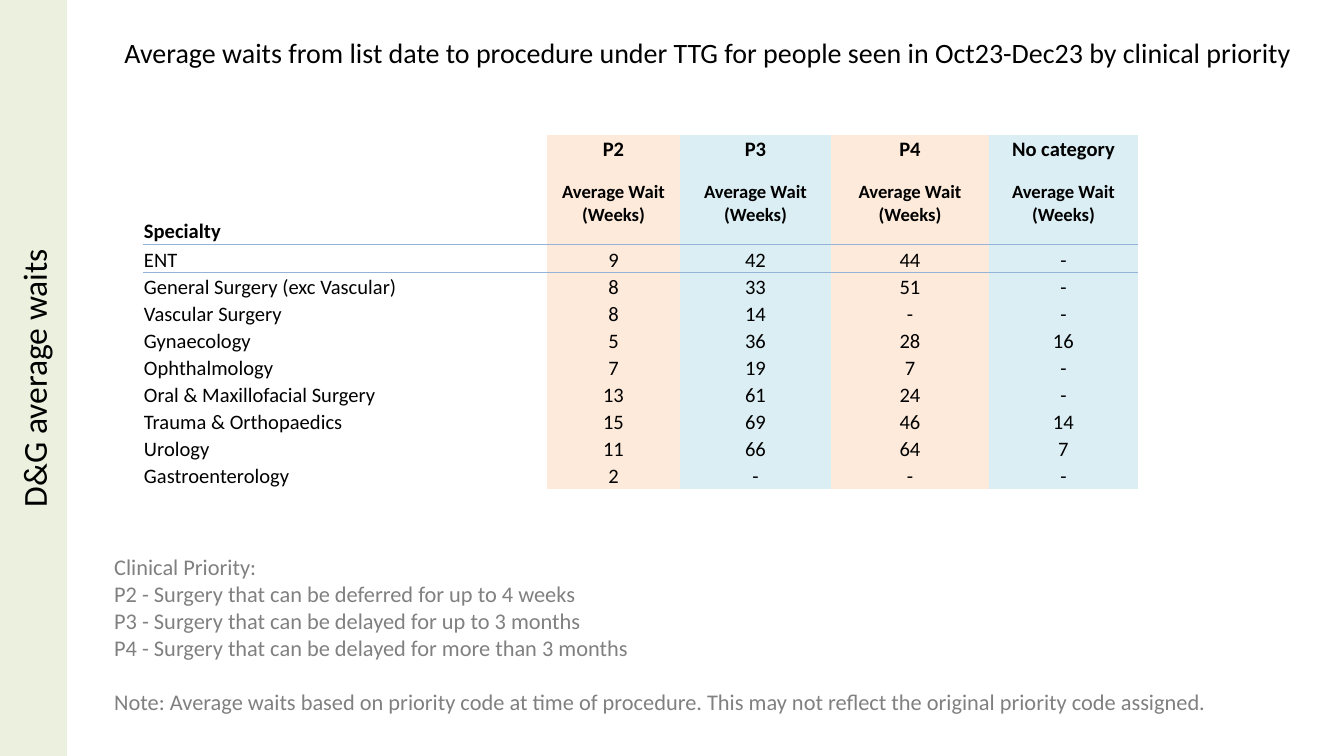
from lxml.etree import SubElement
from pptx import Presentation
from pptx.dml.color import RGBColor
from pptx.enum.shapes import MSO_SHAPE
from pptx.enum.text import MSO_ANCHOR, MSO_AUTO_SIZE, PP_ALIGN
from pptx.oxml.ns import qn
from pptx.util import Pt

SIDEBAR_TEXT = "D&G average waits"
TITLE = ("Average waits from list date to procedure under TTG for people seen "
         "in Oct23-Dec23 by clinical priority")
WAIT = "Average Wait (Weeks)"
ROWS = [
    ("", "P2", "P3", "P4", "No category"),
    ("Specialty", WAIT, WAIT, WAIT, WAIT),
    ("ENT", "9", "42", "44", "-"),
    ("General Surgery (exc Vascular)", "8", "33", "51", "-"),
    ("Vascular Surgery", "8", "14", "-", "-"),
    ("Gynaecology", "5", "36", "28", "16"),
    ("Ophthalmology", "7", "19", "7", "-"),
    ("Oral & Maxillofacial Surgery", "13", "61", "24", "-"),
    ("Trauma & Orthopaedics", "15", "69", "46", "14"),
    ("Urology", "11", "66", "64", "7"),
    ("Gastroenterology", "2", "-", "-", "-"),
]
NOTES = [
    "Clinical Priority:",
    "P2 - Surgery that can be deferred for up to 4 weeks",
    "P3 - Surgery that can be delayed for up to 3 months",
    "P4 - Surgery that can be delayed for more than 3 months",
    "Note: Average waits based on priority code at time of procedure. "
    "This may not reflect the original priority code assigned.",
]

BLACK = RGBColor(0x00, 0x00, 0x00)
WHITE = RGBColor(0xFF, 0xFF, 0xFF)
GREY = RGBColor(0x80, 0x80, 0x80)
GREEN = RGBColor(0xEB, 0xF1, 0xDE)
PEACH = RGBColor(0xFD, 0xEA, 0xDA)
AQUA = RGBColor(0xDB, 0xEE, 0xF4)
RULE = RGBColor(0x95, 0xB3, 0xD7)

FONT = "Calibri"
PLAIN_TABLE = "{2D5ABB26-0587-4C30-8999-92F81FD0307C}"
COLUMN_WIDTHS = [404, 133, 151, 158, 149]
COLUMN_FILLS = [WHITE, PEACH, AQUA, PEACH, AQUA]
ROW_HEIGHTS = [27, 82, 29] + [27] * 8
HEADER_ROWS = 2
SCALE = 914400 / 134.4


def px(length):
    return round(length * SCALE)


def box(left, top, width, height):
    return [px(length) for length in (left, top, width, height)]


def apply(target, values):
    for name, value in values.items():
        setattr(target, name, value)


def write(paragraph, text, size, color=BLACK, bold=False, align=PP_ALIGN.LEFT):
    paragraph.alignment = align
    if not text:
        SubElement(paragraph._p, qn("a:endParaRPr"), sz=str(size * 100))
        return
    run = paragraph.add_run()
    run.text = text
    apply(run.font, {"name": FONT, "size": Pt(size), "bold": bold})
    run.font.color.rgb = color


def add_border(cell, side):
    line = SubElement(cell._tc.get_or_add_tcPr(), qn(f"a:{side}"), w=str(Pt(0.5)))
    fill = SubElement(line, qn("a:solidFill"))
    SubElement(fill, qn("a:srgbClr"), val=str(RULE))


def add_sidebar(slide):
    sidebar = slide.shapes.add_shape(MSO_SHAPE.RECTANGLE, *box(0, 0, 67, 756))
    sidebar.shadow.inherit = False
    sidebar.fill.solid()
    sidebar.fill.fore_color.rgb = GREEN
    sidebar.line.fill.background()
    frame = sidebar.text_frame
    frame.vertical_anchor = MSO_ANCHOR.MIDDLE
    frame._txBody.bodyPr.set("vert", "vert270")
    write(frame.paragraphs[0], SIDEBAR_TEXT, 18, align=PP_ALIGN.CENTER)


def add_title(slide):
    title = slide.shapes.title
    left, top, width, height = box(111, 29, 1218, 47)
    apply(title, {"left": left, "top": top, "width": width, "height": height})
    apply(title.text_frame, {"word_wrap": True, "auto_size": MSO_AUTO_SIZE.NONE,
                             "vertical_anchor": MSO_ANCHOR.TOP})
    write(title.text_frame.paragraphs[0], TITLE, 15)


def add_waits_table(slide):
    area = box(143, 135, sum(COLUMN_WIDTHS), sum(ROW_HEIGHTS))
    table = slide.shapes.add_table(len(ROWS), len(COLUMN_WIDTHS), *area).table
    apply(table, {"first_row": False, "horz_banding": False})
    table._tbl.tblPr.find(qn("a:tableStyleId")).text = PLAIN_TABLE
    for column, width in zip(table.columns, COLUMN_WIDTHS):
        column.width = px(width)
    for row, height in zip(table.rows, ROW_HEIGHTS):
        row.height = px(height)

    for row_index, texts in enumerate(ROWS):
        is_header = row_index < HEADER_ROWS
        for column_index, text in enumerate(texts):
            cell = table.cell(row_index, column_index)
            is_label = column_index == 0
            centred = is_header and not is_label
            apply(cell, {
                "margin_left": px(1), "margin_right": px(1),
                "margin_top": px(1), "margin_bottom": 0,
                "vertical_anchor": MSO_ANCHOR.MIDDLE if centred else MSO_ANCHOR.BOTTOM,
            })
            if row_index == HEADER_ROWS - 1:
                add_border(cell, "lnB")
            elif row_index == HEADER_ROWS:
                add_border(cell, "lnT")
            cell.fill.solid()
            cell.fill.fore_color.rgb = COLUMN_FILLS[column_index]
            write(cell.text_frame.paragraphs[0], text, 10 if text == WAIT else 11,
                  bold=is_header, align=PP_ALIGN.LEFT if is_label else PP_ALIGN.CENTER)


def add_notes(slide):
    frame = slide.shapes.add_textbox(*box(101, 547, 1175, 176)).text_frame
    frame.word_wrap = True
    for index, text in enumerate(NOTES):
        paragraph = frame.add_paragraph() if index else frame.paragraphs[0]
        write(paragraph, text, 12, GREY)
    paragraph.space_before = Pt(14.6)


def main():
    presentation = Presentation()
    apply(presentation, {"slide_width": px(1344), "slide_height": px(756)})
    slide = presentation.slides.add_slide(presentation.slide_layouts[5])
    add_sidebar(slide)
    add_title(slide)
    add_waits_table(slide)
    add_notes(slide)
    presentation.save("out.pptx")


if __name__ == "__main__":
    main()
